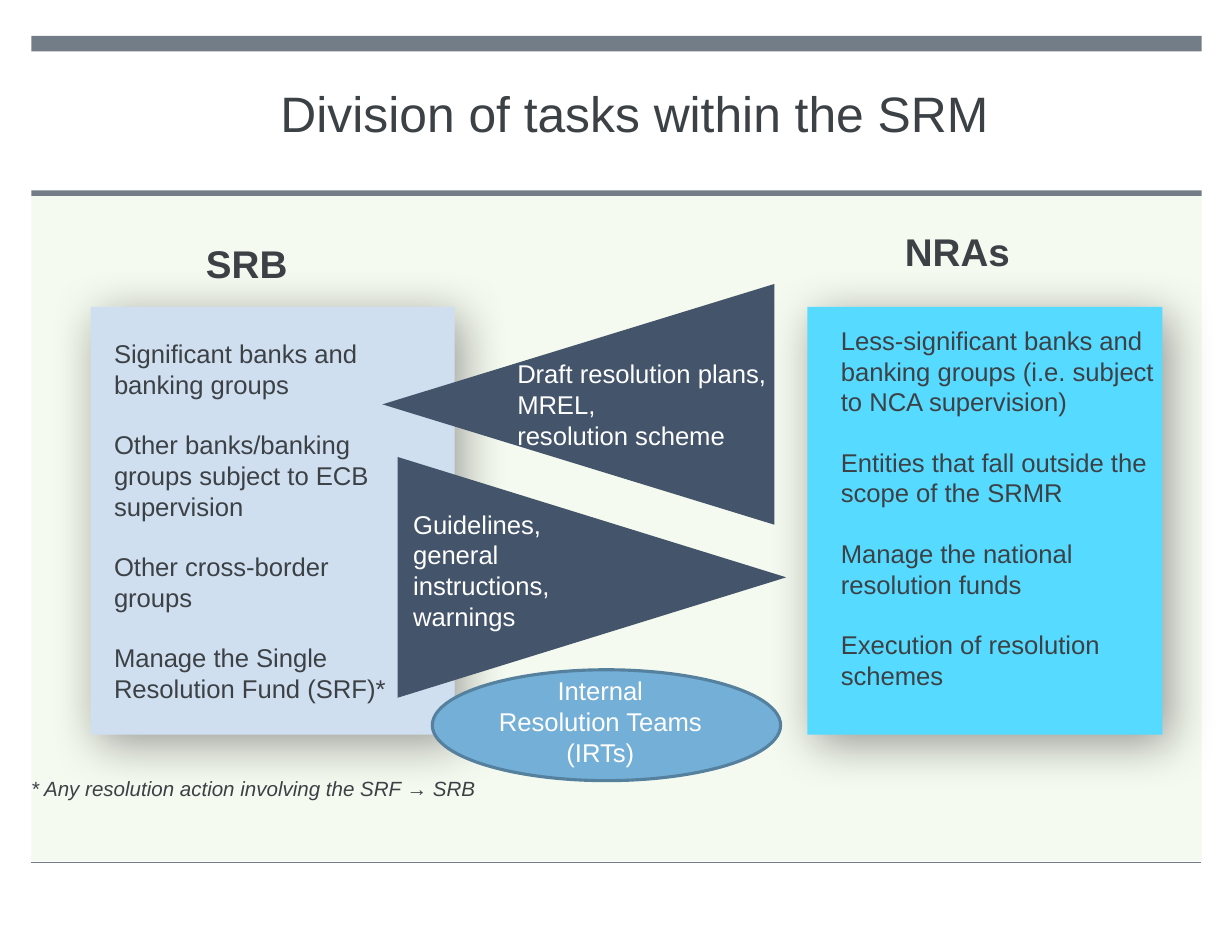
from lxml import etree
from pptx import Presentation
from pptx.dml.color import RGBColor as RGB
from pptx.enum.shapes import MSO_CONNECTOR as Link, MSO_SHAPE as Kind
from pptx.enum.text import MSO_ANCHOR as Anchor, PP_ALIGN as Align
from pptx.oxml import parse_xml
from pptx.oxml.ns import nsdecls, qn
from pptx.util import Inches, Pt

HUES = {
    "bar": "737D87", "panel": "F5FAF0", "ink": "3C4146", "white": "FFFFFF",
    "srb": "D0DFF0", "nra": "57DAFF", "arrow": "44546A",
    "team": "73AFD7", "rim": "55819F",
}
FONT = "Arial"
BODY = 16.5
GAP = 19  # one blank line of body text

SHADE = (
    f'<a:effectLst {nsdecls("a")}>'
    '<a:outerShdw blurRad="393700" dist="88900" dir="3060000" algn="tl" rotWithShape="0">'
    '<a:srgbClr val="000000"><a:alpha val="38000"/></a:srgbClr>'
    '</a:outerShdw></a:effectLst>'
)


class Board:
    def __init__(self, slide):
        self.slide = slide

    def hue(self, name):
        return RGB.from_string(HUES[name])

    def shape(self, kind, at, fill, line=None, turn=0, shade=False):
        item = self.slide.shapes.add_shape(kind, *map(Inches, at))
        item.shadow.inherit = False
        item.fill.solid()
        item.fill.fore_color.rgb = self.hue(fill)
        if line:
            item.line.color.rgb = self.hue(line)
            item.line.width = Pt(2)
        else:
            item.line.fill.background()
        item.rotation = turn
        if shade:
            props = item._element.spPr
            props.replace(props.find(qn("a:effectLst")), parse_xml(SHADE))
        return item

    def rule(self, left, right, y):
        item = self.slide.shapes.add_connector(
            Link.STRAIGHT, Inches(left), Inches(y), Inches(right), Inches(y))
        item.line.color.rgb = self.hue("bar")
        item.line.width = Pt(1)
        etree.SubElement(item._element.spPr, qn("a:effectLst"))

    def text(self, at, lines, size=BODY, hue="ink", align=Align.LEFT,
             gap=0, bold=False, slant=False, wrap=True):
        box = self.slide.shapes.add_textbox(*map(Inches, at))
        frame = box.text_frame
        frame.word_wrap = wrap
        frame.text = "\n".join(lines)
        for para in frame.paragraphs:
            para.alignment = align
            para.space_after = Pt(gap)
            font = para.font
            font.name, font.size = FONT, Pt(size)
            font.bold, font.italic = bold, slant
            font.color.rgb = self.hue(hue)
        return frame


def main():
    deck = Presentation()
    deck.slide_width, deck.slide_height = Inches(11), Inches(8.5)
    board = Board(deck.slides.add_slide(deck.slide_layouts[6]))

    # Background panel and bars
    for top, high, fill in ((1.75, 5.94, "panel"), (1.7, 0.05, "bar"),
                            (0.32, 0.14, "bar")):
        board.shape(Kind.RECTANGLE, (0.28, top, 10.45, high), fill)
    board.rule(0.28, 10.72, 7.7)

    # Title
    title = board.text((1.64, 0.8, 8.06, 0.74),
                       ["Division of tasks within the SRM"], 32, align=Align.CENTER)
    title.margin_left = title.margin_right = 0
    title.margin_top = title.margin_bottom = 0
    title.vertical_anchor = Anchor.T if hasattr(Anchor, "T") else Anchor.TOP
    title.paragraphs[0].line_spacing = 0.9

    # Task cards: heading, card, tasks
    cards = (
        ("SRB", (1.74, 2.09, 0.93, 0.52), (0.81, 2.74, 3.25, 3.82), "srb",
         (0.92, 2.97, 2.66, 3.43),
         ["Significant banks and banking groups",
          "Other banks/banking groups subject to ECB supervision",
          "Other cross-border groups",
          "Manage the Single Resolution Fund (SRF)*"]),
        ("NRAs", (7.98, 1.99, 1.15, 0.52), (7.21, 2.74, 3.17, 3.82), "nra",
         (7.41, 2.85, 3.03, 3.43),
         ["Less-significant banks and banking groups (i.e. subject to NCA supervision)",
          "Entities that fall outside the scope of the SRMR",
          "Manage the national resolution funds",
          "Execution of resolution schemes"]),
    )
    for name, head, card, fill, body, tasks in cards:
        board.text(head, [name], 24.8, bold=True, wrap=False)
        board.shape(Kind.RECTANGLE, card, fill, shade=True)
        board.text(body, tasks, gap=GAP)

    # Exchange arrows
    board.shape(Kind.ISOSCELES_TRIANGLE, (4.09, 1.86, 2.15, 3.5), "arrow", turn=270)
    board.shape(Kind.ISOSCELES_TRIANGLE, (4.21, 3.42, 2.15, 3.47), "arrow", turn=90)
    board.text((4.52, 3.15, 2.55, 0.93),
               ["Draft resolution plans, MREL,", "resolution scheme"], hue="white")
    board.text((3.59, 4.49, 2.09, 1.21),
               ["Guidelines, general instructions, warnings"], hue="white")

    # Joint teams
    board.shape(Kind.OVAL, (3.86, 5.98, 3.11, 0.99), "team", "rim")
    board.text((4.31, 5.98, 2.1, 0.93), ["Internal Resolution Teams (IRTs)"],
               hue="white", align=Align.CENTER)

    # Footnote
    board.text((0.18, 6.88, 4.47, 0.32),
               ["* Any resolution action involving the SRF → SRB"], 13.2, slant=True)

    deck.save("out.pptx")


if __name__ == "__main__":
    main()
